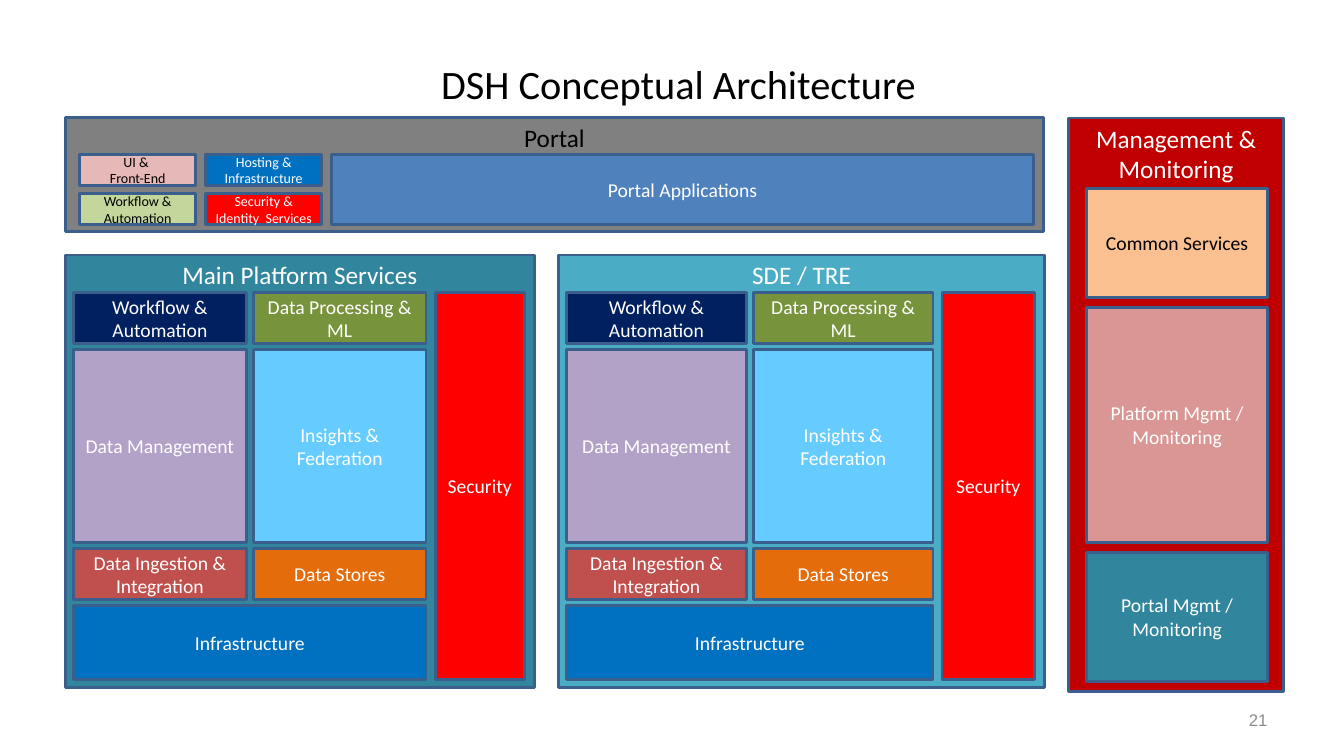
from itertools import accumulate
from pptx import Presentation
from pptx.dml.color import RGBColor
from pptx.enum.shapes import MSO_SHAPE
from pptx.enum.text import MSO_ANCHOR, PP_ALIGN
from pptx.util import Inches, Pt

RECT = MSO_SHAPE.RECTANGLE
TOP, MIDDLE = MSO_ANCHOR.TOP, MSO_ANCHOR.MIDDLE
CENTER, RIGHT = PP_ALIGN.CENTER, PP_ALIGN.RIGHT

BLACK = RGBColor(0x00, 0x00, 0x00)
WHITE = RGBColor(0xFF, 0xFF, 0xFF)
GRAY = RGBColor(0x80, 0x80, 0x80)
SILVER = RGBColor(0x8C, 0x8C, 0x8C)
EDGE = RGBColor(0x3A, 0x5F, 0x8C)
CRIMSON = RGBColor(0xC0, 0x00, 0x00)
RED = RGBColor(0xFF, 0x00, 0x00)
BRICK = RGBColor(0xC0, 0x50, 0x4D)
ROSE = RGBColor(0xD9, 0x96, 0x94)
PINK = RGBColor(0xE6, 0xB9, 0xB8)
PEACH = RGBColor(0xFA, 0xC0, 0x90)
ORANGE = RGBColor(0xE4, 0x6C, 0x0A)
OLIVE = RGBColor(0x77, 0x93, 0x3C)
LIME = RGBColor(0xC3, 0xD6, 0x9B)
TEAL = RGBColor(0x31, 0x85, 0x9C)
AQUA = RGBColor(0x4B, 0xAC, 0xC6)
SKY = RGBColor(0x66, 0xCC, 0xFF)
BLUE = RGBColor(0x00, 0x70, 0xC0)
STEEL = RGBColor(0x4F, 0x81, 0xBD)
NAVY = RGBColor(0x00, 0x20, 0x60)
LILAC = RGBColor(0xB3, 0xA2, 0xC7)

# Content: (text, fill, text colour)
TITLE = "DSH Conceptual Architecture"
PAGE = "21"
PORTAL = [
    [("UI & \nFront-End", PINK, BLACK),
     ("Hosting & Infrastructure", BLUE, WHITE)],
    [("Workflow & Automation", LIME, BLACK),
     ("Security & Identity  Services", RED, WHITE)],
]
# Platforms: (name, fill, left, width)
PLATFORMS = [
    ("Main Platform Services", TEAL, 0.65, 4.65),
    ("SDE / TRE", AQUA, 5.54, 4.82),
]
# Platform rows: (height, tiles); a lone tile spans both columns
ROWS = [
    (0.51, [("Workflow & Automation", NAVY), ("Data Processing & ML", OLIVE)]),
    (1.91, [("Data Management", LILAC), ("Insights & Federation", SKY)]),
    (0.51, [("Data Ingestion & Integration", BRICK), ("Data Stores", ORANGE)]),
    (0.73, [("Infrastructure", BLUE)]),
]
# Management stack: (height, text, fill, text colour)
STACK = [
    (1.08, "Common Services", PEACH, BLACK),
    (2.33, "Platform Mgmt / Monitoring", ROSE, WHITE),
    (1.28, "Portal Mgmt / Monitoring", TEAL, WHITE),
]

prs = Presentation()
prs.slide_width, prs.slide_height = Inches(13.33), Inches(7.5)
slide = prs.slides.add_slide(prs.slide_layouts[6])


def put(text, x, y, w, h, fill=None, size=14, color=WHITE, font="Calibri",
        align=CENTER, anchor=MIDDLE, inset=(0.08, 0.04)):
    """Place text in a filled, outlined box, or in a plain one without fill."""
    area = [Inches(v) for v in (x, y, w, h)]
    if fill is None:
        box = slide.shapes.add_textbox(*area)
    else:
        box = slide.shapes.add_shape(RECT, *area)
        box.shadow.inherit = False
        box.fill.solid()
        box.fill.fore_color.rgb = fill
        box.line.color.rgb = EDGE
        box.line.width = Pt(2)
    frame = box.text_frame
    frame.word_wrap = True
    frame.vertical_anchor = anchor
    frame.margin_left = frame.margin_right = Inches(inset[0])
    frame.margin_top = frame.margin_bottom = Inches(inset[1])
    frame.text = text
    for para in frame.paragraphs:
        para.alignment = align
        para.font.size = Pt(size)
        para.font.name = font
        para.font.color.rgb = color


def starts(top, sizes, gap):
    """Top edge of each item in a column with equal gaps."""
    return accumulate([size + gap for size in sizes[:-1]], initial=top)


# Title and page number
put(TITLE, 0.73, 0.54, 12, 0.57, size=28.8, color=BLACK)
put(PAGE, 9.56, 6.94, 3.11, 0.4, size=12, color=SILVER, font="Arial",
    align=RIGHT, inset=(0.1, 0.05))

# Portal
put("Portal", 0.65, 1.17, 9.7, 1.13, GRAY, size=18, color=BLACK, anchor=TOP)
for row, cells in enumerate(PORTAL):
    for col, (text, fill, color) in enumerate(cells):
        put(text, 0.79 + col * 1.25, 1.53 + row * 0.39, 1.15, 0.31, fill,
            size=10, color=color)
put("Portal Applications", 3.29, 1.53, 6.96, 0.7, STEEL)

# Platforms
PAD, GAP, VGAP, EDGE_PAD = 0.08, 0.07, 0.06, 0.1
heights = [height for height, _ in ROWS]
for name, fill, left, width in PLATFORMS:
    put(name, left, 2.53, width, 4.29, fill, size=18, anchor=TOP,
        inset=(0.1, 0.04))
    bar = width * 0.19
    span = width - PAD - bar - EDGE_PAD - 0.09
    tile = (span - GAP) / 2
    for y, (height, cells) in zip(starts(2.9, heights, VGAP), ROWS):
        wide = tile if len(cells) > 1 else span
        for col, (text, tint) in enumerate(cells):
            put(text, left + PAD + col * (tile + GAP), y, wide, height, tint)
    put("Security", left + width - EDGE_PAD - bar, 2.9, bar,
        sum(heights) + VGAP * (len(heights) - 1), RED)

# Management and monitoring
put("Management & Monitoring", 10.6, 1.17, 2.13, 5.69, CRIMSON, size=18,
    anchor=TOP, inset=(0.1, 0.05))
tops = starts(1.87, [item[0] for item in STACK], 0.1)
for y, (height, text, fill, color) in zip(tops, STACK):
    put(text, 10.78, y, 1.79, height, fill, color=color)

prs.save("out.pptx")
